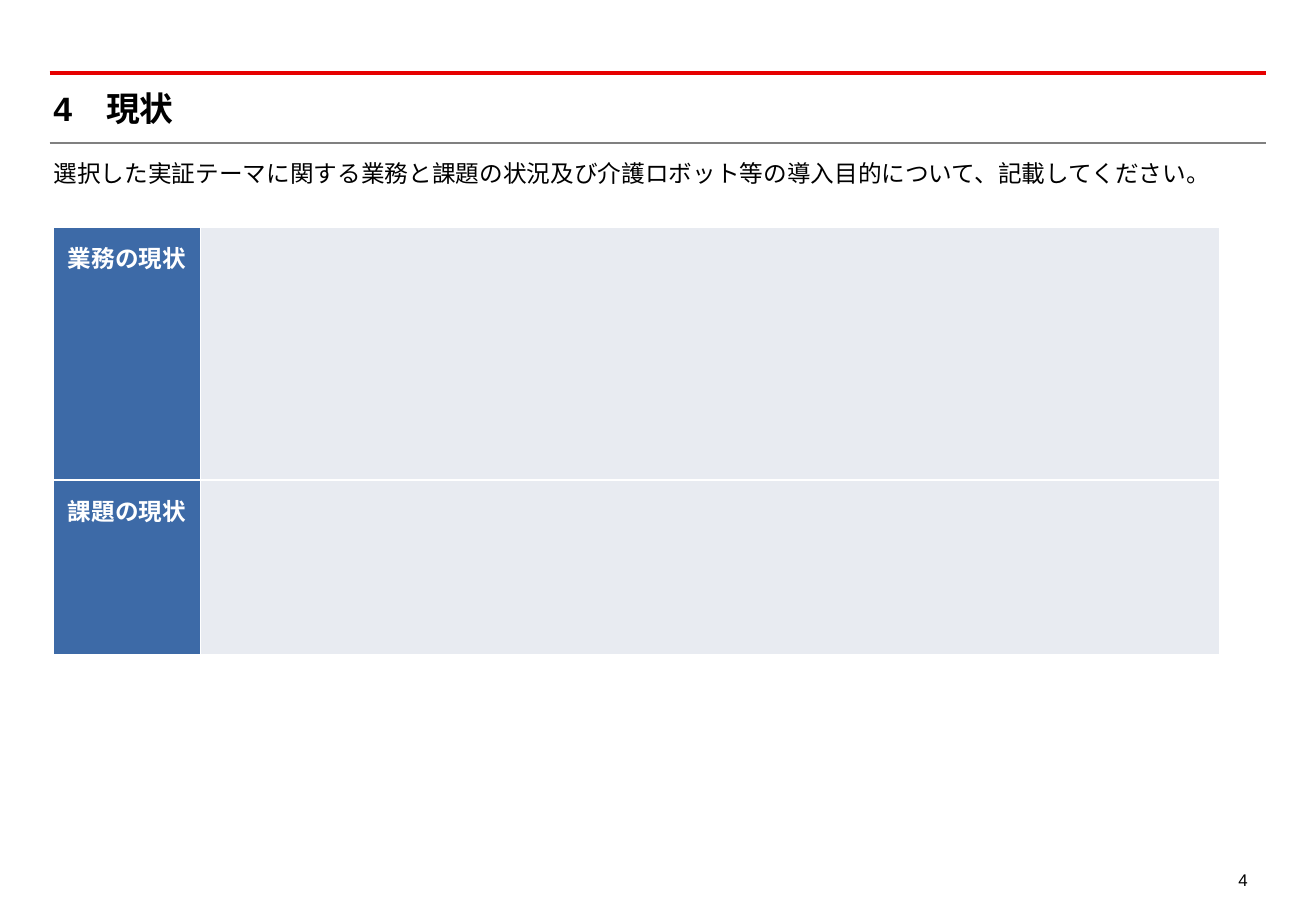
from lxml import etree
from pptx import Presentation
from pptx.dml.color import RGBColor
from pptx.enum import shapes, text
from pptx.oxml import ns
from pptx.util import Pt

LATIN, JAPANESE = "Arial", "Noto Sans CJK JP"
LEFT = 31.68


def rgb(value):
    return RGBColor.from_string(value)


def write(frame, words, size, color="000000", bold=False, latin=LATIN,
          align=text.PP_ALIGN.LEFT, spacing=1.2):
    """Put one formatted line of text into a text frame."""
    paragraph = frame.paragraphs[0]
    paragraph.alignment = align
    paragraph.line_spacing = spacing
    run = paragraph.add_run()
    run.text = words
    for name, value in {"size": Pt(size), "bold": bold, "name": latin}.items():
        setattr(run.font, name, value)
    run.font.color.rgb = rgb(color)
    etree.SubElement(run.font._element, ns.qn("a:ea"), typeface=JAPANESE)


deck = Presentation()
deck.slide_width, deck.slide_height = Pt(780), Pt(540)
slide = deck.slides.add_slide(deck.slide_layouts[6])

# Rules above and below the heading
for y, color, weight in [(43.2, "E60000", 2), (84.96, "808080", 1.25)]:
    rule = slide.shapes.add_connector(
        shapes.MSO_CONNECTOR.STRAIGHT, Pt(29.5), Pt(y), Pt(750.5), Pt(y))
    rule.line.color.rgb = rgb(color)
    rule.line.width = Pt(weight)
    etree.SubElement(rule._element.spPr, ns.qn("a:effectLst"))

# Heading, instruction and page number
middle, top = text.MSO_ANCHOR.MIDDLE, text.MSO_ANCHOR.TOP
instruction = "選択した実証テーマに関する業務と課題の状況及び介護ロボット等の導入目的について、記載してください。"
lines = [
    ((LEFT, 51.84, 713.52, 24.48), 0, middle, "4　現状",
     {"size": 20, "bold": True, "spacing": 1.0}),
    ((LEFT, 90.72, 713.52, 18), 0, top, instruction, {"size": 14}),
    ((714.96, 509.76, 31.68, 20.16), 1, top, "4",
     {"size": 10, "align": text.PP_ALIGN.RIGHT}),
]
for place, inset, anchor, words, style in lines:
    frame = slide.shapes.add_textbox(*map(Pt, place)).text_frame
    frame.word_wrap = True
    frame.vertical_anchor = anchor
    frame.margin_left = frame.margin_right = Pt(7.2 * inset)
    frame.margin_top = frame.margin_bottom = Pt(3.6 * inset)
    write(frame, words, **style)

# Table of the current situation
topics = [("業務の現状", 149.76), ("課題の現状", 103.68)]
widths = [87.12, 604.08]
situation = slide.shapes.add_table(
    len(topics), len(widths), Pt(LEFT), Pt(134.64),
    Pt(sum(widths)), Pt(sum(height for _, height in topics))).table
situation.first_row = situation.horz_banding = False
for column, width in zip(situation.columns, widths):
    column.width = Pt(width)
for index, (topic, height) in enumerate(topics):
    situation.rows[index].height = Pt(height)
    for cell, color in zip(situation.rows[index].cells, ["3D6AA7", "E8EBF1"]):
        properties = cell._tc.get_or_add_tcPr()
        for side in ["lnL", "lnR", "lnT", "lnB"]:
            border = etree.SubElement(properties, ns.qn(f"a:{side}"), w=str(Pt(1)))
            fill = etree.SubElement(border, ns.qn("a:solidFill"))
            etree.SubElement(fill, ns.qn("a:srgbClr"), val="FFFFFF")
        cell.fill.solid()
        cell.fill.fore_color.rgb = rgb(color)
    write(situation.cell(index, 0).text_frame, topic, 14, "FFFFFF", True,
          JAPANESE, text.PP_ALIGN.CENTER)

deck.save("out.pptx")
